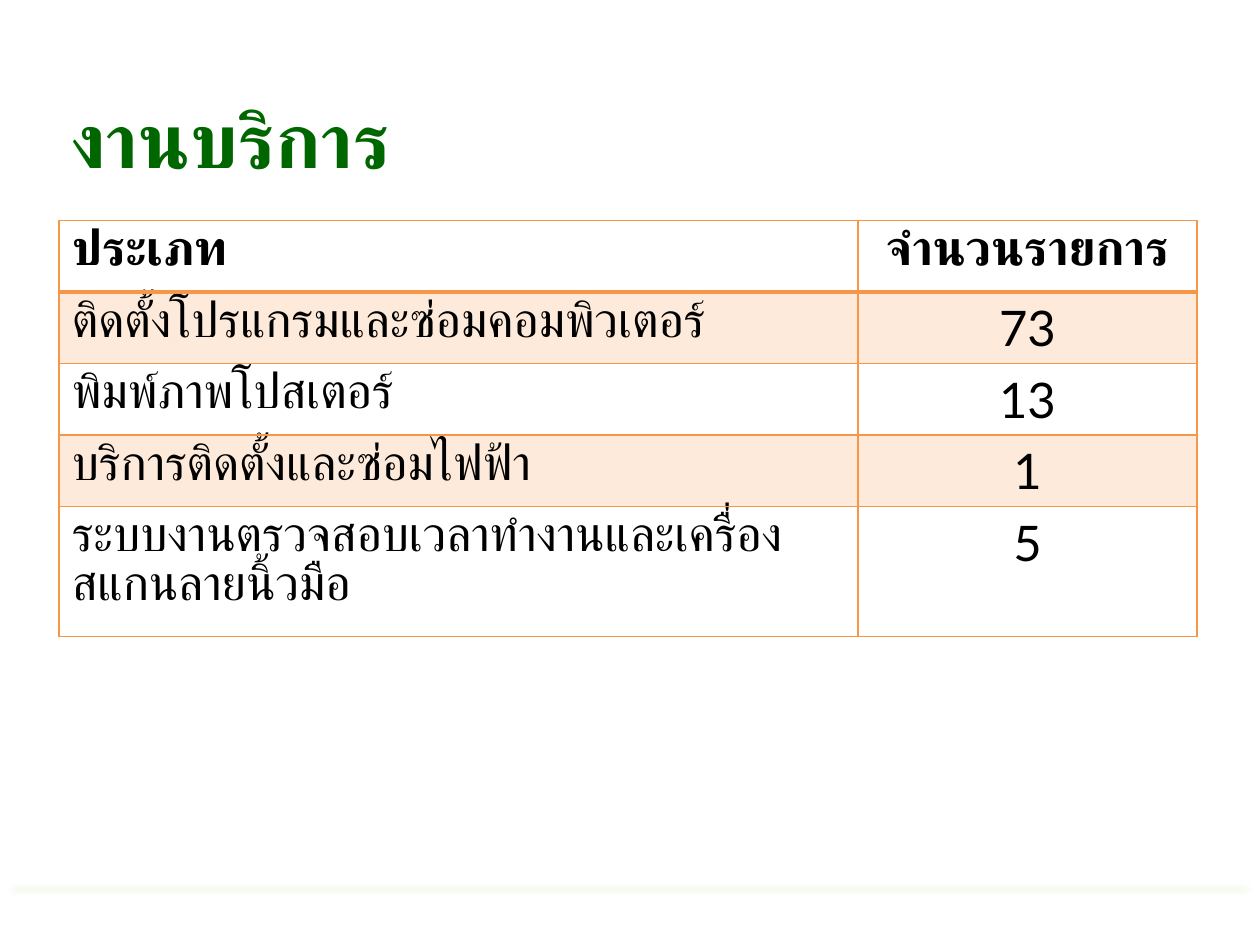
import pptx
import pptx.util
import pptx.dml.color
import pptx.enum.shapes
import pptx.enum.text
import pptx.oxml
import pptx.oxml.ns
from lxml import etree

Inches, Pt = pptx.util.Inches, pptx.util.Pt
RGBColor = pptx.dml.color.RGBColor
ALIGN = pptx.enum.text.PP_ALIGN
qn = pptx.oxml.ns.qn

# Content
TITLE = "งานบริการ"
ROWS = [
    ("ประเภท", "จำนวนรายการ"),
    ("ติดตั้งโปรแกรมและซ่อมคอมพิวเตอร์", "73"),
    ("พิมพ์ภาพโปสเตอร์", "13"),
    ("บริการติดตั้งและซ่อมไฟฟ้า", "1"),
    ("ระบบงานตรวจสอบเวลาทำงานและเครื่องสแกนลายนิ้วมือ", "5"),
]
COLUMN_WIDTHS = (6.34, 2.69)
COLUMN_ALIGNMENTS = (ALIGN.LEFT, ALIGN.CENTER)
ROW_HEIGHT = 0.41
LEFT, WIDTH = 0.47, 9.03

# Colours and text formats
GREEN = RGBColor(0x7E, 0xC2, 0x34)
DARK_GREEN = RGBColor(0x00, 0x66, 0x00)
ORANGE = RGBColor(0xF7, 0x96, 0x46)
PEACH = RGBColor(0xFD, 0xEA, 0xDA)
BLACK = RGBColor(0x00, 0x00, 0x00)
TITLE_FORMAT = {"name": "Lato", "size": Pt(44), "bold": True}
HEADER_FORMAT = {"name": "Lato", "size": Pt(28), "bold": True}
BODY_FORMAT = {**HEADER_FORMAT, "bold": False}


def write(text_frame, text, text_format, color, alignment=ALIGN.LEFT):
    paragraph = text_frame.paragraphs[0]
    paragraph.alignment = alignment
    run = paragraph.add_run()
    run.text = text
    for name, value in text_format.items():
        setattr(run.font, name, value)
    run.font.color.rgb = color


def set_border(cell, side, width):
    line = etree.SubElement(cell._tc.get_or_add_tcPr(), qn("a:" + side), w=str(Pt(width)))
    fill = etree.SubElement(line, qn("a:solidFill"))
    etree.SubElement(fill, qn("a:srgbClr"), val=str(ORANGE))


def add_footer_line(slide):
    shape = slide.shapes.add_shape(
        pptx.enum.shapes.MSO_SHAPE.RECTANGLE,
        Inches(0), Inches(6.98), Inches(10), Inches(0.16))
    shape.fill.solid()
    shape.fill.fore_color.rgb = GREEN
    shape.line.fill.background()
    shape.shadow.inherit = False
    properties = shape._element.spPr
    color = properties.find(qn("a:solidFill")).find(qn("a:srgbClr"))
    etree.SubElement(color, qn("a:alpha"), val="30000")
    effects = properties.find(qn("a:effectLst"))
    etree.SubElement(effects, qn("a:softEdge"), rad=str(Inches(0.07)))


def add_title(slide):
    box = slide.shapes.add_textbox(Inches(LEFT), Inches(0.47), Inches(WIDTH), Inches(1.25))
    box.text_frame.word_wrap = True
    box.text_frame.vertical_anchor = pptx.enum.text.MSO_ANCHOR.MIDDLE
    write(box.text_frame, TITLE, TITLE_FORMAT, DARK_GREEN)


def add_service_table(slide):
    table = slide.shapes.add_table(
        len(ROWS), len(COLUMN_WIDTHS), Inches(LEFT), Inches(1.75),
        Inches(WIDTH), Inches(ROW_HEIGHT * len(ROWS))).table
    for column, width in zip(table.columns, COLUMN_WIDTHS):
        column.width = Inches(width)
    for row_index, values in enumerate(ROWS):
        table.rows[row_index].height = Inches(ROW_HEIGHT)
        text_format = BODY_FORMAT if row_index else HEADER_FORMAT
        for column_index, text in enumerate(values):
            cell = table.cell(row_index, column_index)
            write(cell.text_frame, text, text_format, BLACK, COLUMN_ALIGNMENTS[column_index])
            # The header is ruled off by a thicker line
            widths = {"lnL": 1, "lnR": 1, "lnT": 2 if row_index == 1 else 1,
                      "lnB": 2 if row_index == 0 else 1}
            for side, width in widths.items():
                set_border(cell, side, width)
            # Every other body row is tinted
            if row_index % 2:
                cell.fill.solid()
                cell.fill.fore_color.rgb = PEACH
            else:
                cell.fill.background()


def main():
    presentation = pptx.Presentation()
    presentation.slide_width, presentation.slide_height = Inches(10), Inches(7.5)
    slide = presentation.slides.add_slide(presentation.slide_layouts[6])
    add_footer_line(slide)
    add_title(slide)
    add_service_table(slide)
    presentation.save("out.pptx")


if __name__ == "__main__":
    main()
